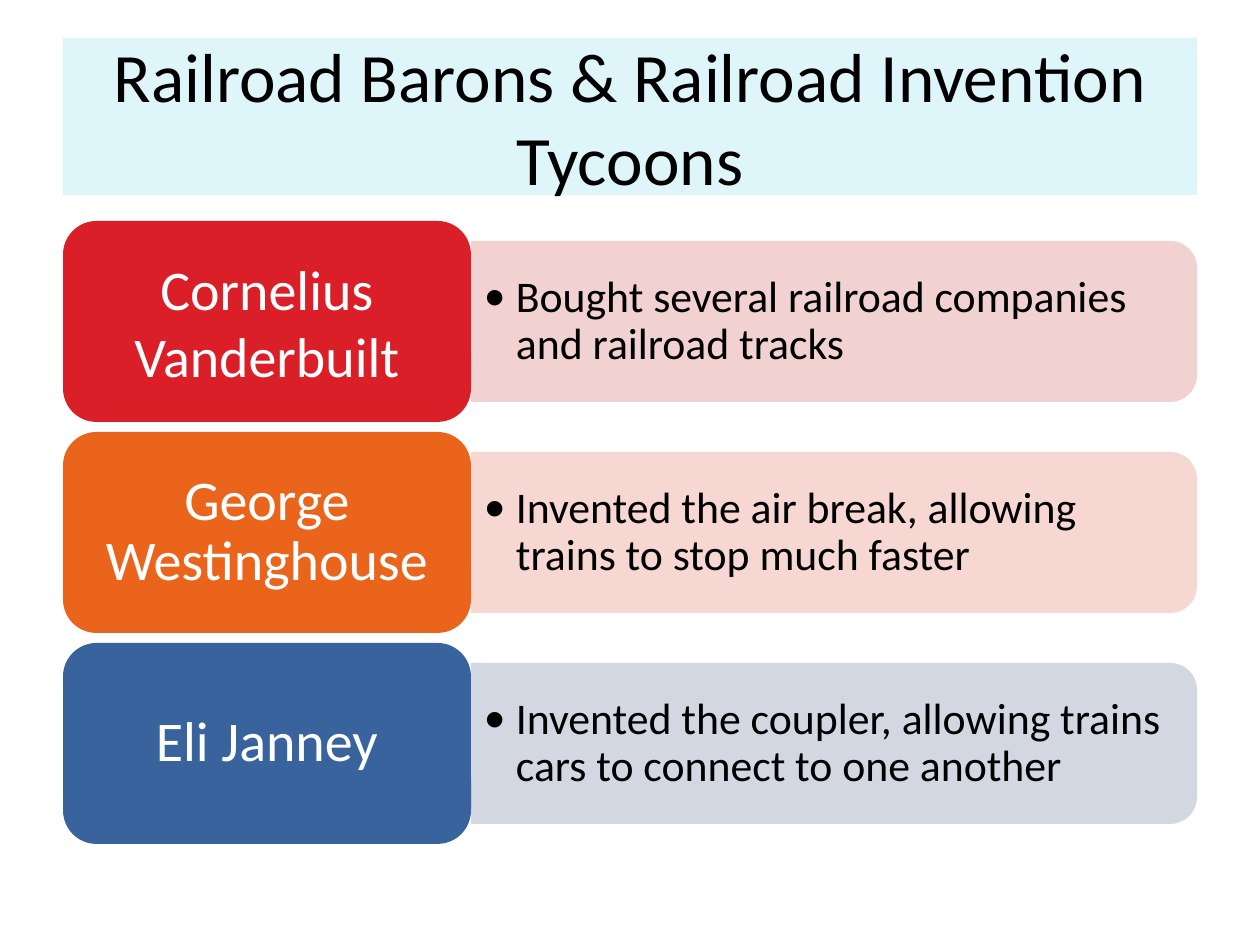
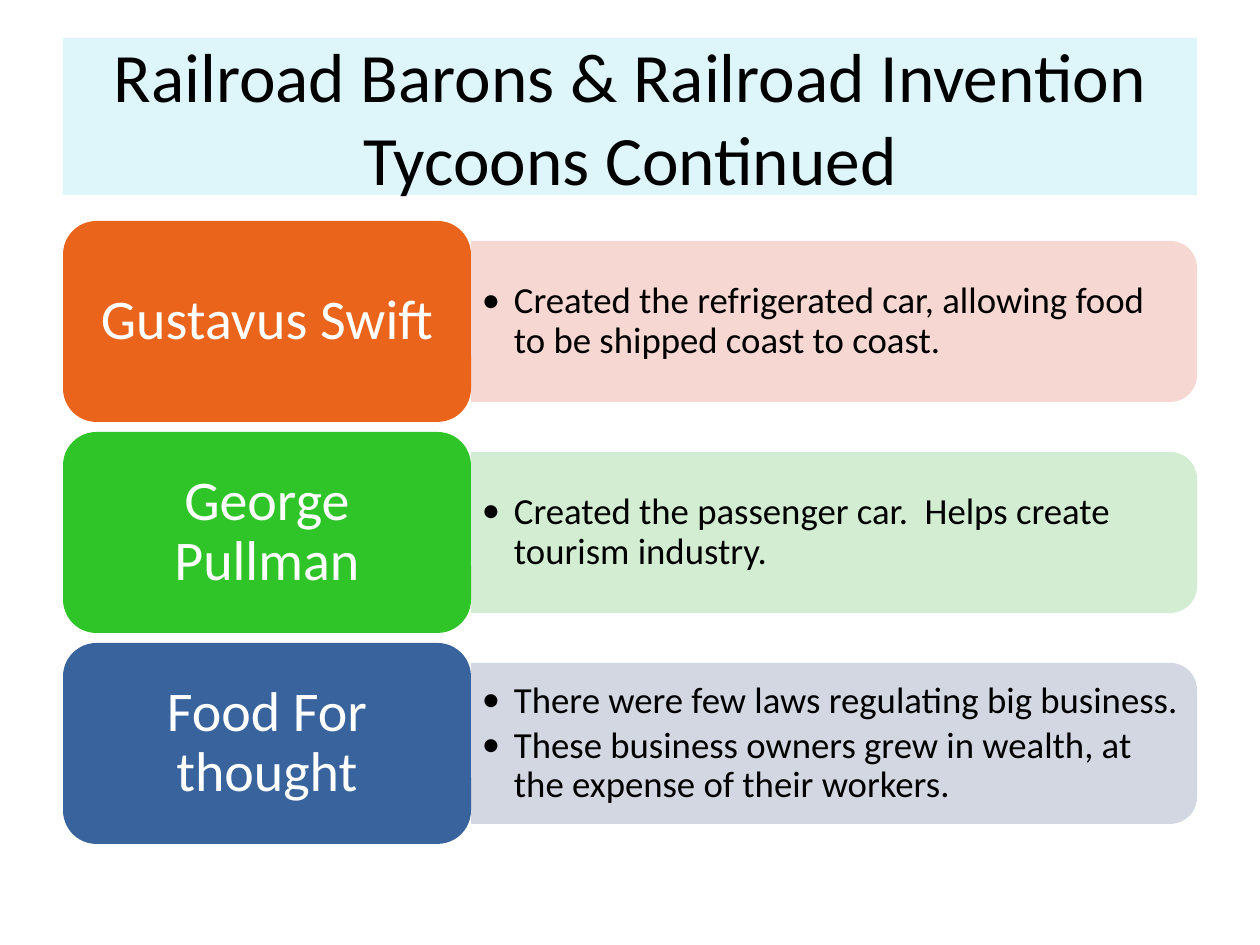
"""Build two slides on railroad barons and inventors as rows of name and deeds."""
from lxml import etree
from pptx import Presentation
from pptx import util as u
from pptx.dml.color import RGBColor
from pptx.enum import shapes, text
from pptx.oxml.ns import qn

FONT = "Calibri"
COLORS = {
    "title": "DEF5FA", "black": "000000", "white": "FFFFFF",
    "red": "DA1F28", "orange": "EB641B", "green": "2FC529", "blue": "39639D",
    "red_tint": "F1CDCD", "orange_tint": "F7D3CD",
    "green_tint": "CEECCC", "blue_tint": "CED3DF",
}
SLIDES = [
    {
        "title": "Railroad Barons & Railroad Invention Tycoons",
        "size": 25, "insets": (13, 6),
        "rows": [
            ("Cornelius Vanderbuilt", "red", 1.0,
             ["Bought several railroad companies and railroad tracks"]),
            ("George Westinghouse", "orange", 0.9,
             ["Invented the air break, allowing trains to stop much faster"]),
            ("Eli Janney", "blue", 0.9,
             ["Invented the coupler, allowing trains cars to connect to one another"]),
        ],
    },
    {
        "title": "Railroad Barons & Railroad Invention Tycoons Continued",
        "size": 21, "insets": (11, 5),
        "rows": [
            ("Gustavus Swift", "orange", 0.9,
             ["Created the refrigerated car, allowing food to be shipped coast to coast."]),
            ("George Pullman", "green", 0.9,
             ["Created the passenger car.  Helps create tourism industry."]),
            ("Food For thought", "blue", 0.9,
             ["There were few laws regulating big business.",
              "These business owners grew in wealth, at the expense of their workers."]),
        ],
    },
]

LEFT, WIDTH = 63, 1134
TITLE_TOP, TITLE_H = 38, 157
ROWS_TOP, ROW_H, ROW_GAP = 221, 201, 10
NAME_W = 408
DEED_W, DEED_H = WIDTH - NAME_W, 161
DEED_TEXT_W, DEED_TEXT_H = 718, 145
INDENT = 32


def px(n):
    return u.Emu(round(n * 914400 / 126))


def add_block(s, kind, box, color):
    sp = s.shapes.add_shape(kind, *map(px, box))
    sp.shadow.inherit = False
    sp.fill.solid()
    sp.fill.fore_color.rgb = RGBColor.from_string(COLORS[color])
    sp.line.fill.background()
    return sp


def write(sp, lines, size, color, align, spacing=1.0, insets=(13, 6)):
    tf = sp.text_frame
    tf.text = "\n".join(lines)
    tf.word_wrap = True
    tf.vertical_anchor = text.MSO_ANCHOR.MIDDLE
    tf.margin_left = tf.margin_right = px(insets[0])
    tf.margin_top = tf.margin_bottom = px(insets[1])
    for p in tf.paragraphs:
        p.alignment = align
        p.line_spacing = spacing
        for r in p.runs:
            r.font.name = FONT
            r.font.size = u.Pt(size)
            r.font.color.rgb = RGBColor.from_string(COLORS[color])
    return tf


def add_bullets(tf, size):
    for p in tf.paragraphs:
        p.space_after = u.Pt(round(size * 0.15, 1))
        pPr = p._p.get_or_add_pPr()
        pPr.set("marL", str(px(INDENT)))
        pPr.set("indent", str(-px(INDENT)))
        etree.SubElement(pPr, qn("a:buFont")).set("typeface", FONT)
        etree.SubElement(pPr, qn("a:buChar")).set("char", "•")


def add_title(s, title):
    sp = add_block(s, shapes.MSO_SHAPE.RECTANGLE,
                   (LEFT, TITLE_TOP, WIDTH, TITLE_H), "title")
    write(sp, [title], 39.6, "black", text.PP_ALIGN.CENTER)


def add_row(s, top, row, size, insets):
    name, color, spacing, deeds = row
    deed_left, mid = LEFT + NAME_W, top + ROW_H / 2

    band = add_block(s, shapes.MSO_SHAPE.ROUND_2_SAME_RECTANGLE,
                     (deed_left + (DEED_W - DEED_H) / 2, mid - DEED_W / 2,
                      DEED_H, DEED_W), color + "_tint")
    band.rotation = 90
    rgb = band.fill._xPr.find(qn("a:solidFill"))[0]
    etree.SubElement(rgb, qn("a:alpha")).set("val", "90000")

    tb = s.shapes.add_textbox(px(deed_left), px(mid - DEED_TEXT_H / 2),
                              px(DEED_TEXT_W), px(DEED_TEXT_H))
    tf = write(tb, deeds, size, "black", text.PP_ALIGN.LEFT, 0.9, insets)
    add_bullets(tf, size)

    sp = add_block(s, shapes.MSO_SHAPE.ROUNDED_RECTANGLE,
                   (LEFT, top, NAME_W, ROW_H), color)
    write(sp, [name], 32, "white", text.PP_ALIGN.CENTER, spacing, (16, 9))


def main():
    prs = Presentation()
    prs.slide_width, prs.slide_height = px(1260), px(945)
    for content in SLIDES:
        s = prs.slides.add_slide(prs.slide_layouts[6])
        add_title(s, content["title"])
        for i, row in enumerate(content["rows"]):
            add_row(s, ROWS_TOP + i * (ROW_H + ROW_GAP), row,
                    content["size"], content["insets"])
    prs.save("out.pptx")


if __name__ == "__main__":
    main()
